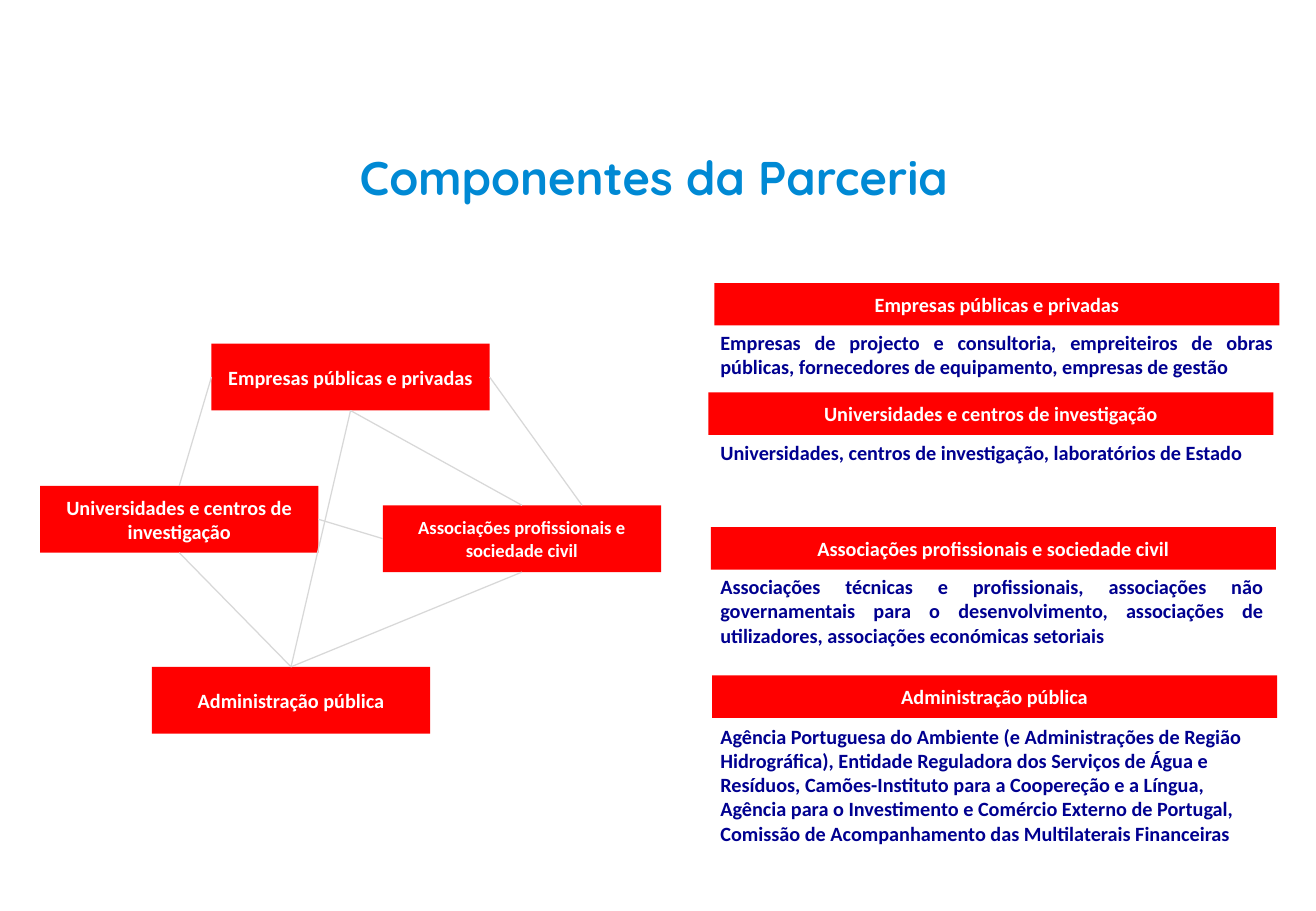
import pptx
import pptx.dml.color
import pptx.enum.shapes
import pptx.enum.text
import pptx.oxml.ns
import pptx.util
import lxml.etree
from dataclasses import dataclass

PX = 9144  # 100 px to the inch
ALIGN = pptx.enum.text.PP_ALIGN
ANCHOR = pptx.enum.text.MSO_ANCHOR
TOP, LEFT, BOTTOM, RIGHT = range(4)  # connection sites of a rectangle


@dataclass(frozen=True)
class Theme:
    box: str = "FF0000"
    box_text: str = "FFFFFF"
    body_text: str = "000090"
    title_text: str = "0089D4"
    link: str = "D8D8D8"
    font: str = "Calibri"
    title_font: str = "Quicksand"
    title_size: int = 28
    size: int = 12
    small: int = 11
    link_width: float = 0.75


class Deck:
    def __init__(self, theme, width, height):
        self.theme = theme
        self.prs = pptx.Presentation()
        self.prs.slide_width = width * PX
        self.prs.slide_height = height * PX
        self.s = self.prs.slides.add_slide(self.prs.slide_layouts[6])

    def color(self, value):
        return pptx.dml.color.RGBColor.from_string(value)

    def fill_text(self, sp, text, size, color, font, align, anchor):
        tf = sp.text_frame
        tf.word_wrap = True
        tf.vertical_anchor = anchor
        p = tf.paragraphs[0]
        p.alignment = align
        r = p.add_run()
        r.text = text
        r.font.name = font
        r.font.size = pptx.util.Pt(size)
        r.font.bold = True
        r.font.color.rgb = self.color(color)

    def text(self, x, y, w, h, text, align):
        t = self.theme
        sp = self.s.shapes.add_textbox(x * PX, y * PX, w * PX, h * PX)
        self.fill_text(sp, text, t.size, t.body_text, t.font, align, ANCHOR.TOP)

    def title(self, x, y, w, h, text):
        t = self.theme
        sp = self.s.shapes.add_textbox(x * PX, y * PX, w * PX, h * PX)
        self.fill_text(sp, text, t.title_size, t.title_text, t.title_font,
                       ALIGN.CENTER, ANCHOR.MIDDLE)

    def box(self, x, y, w, h, text, size=None):
        t = self.theme
        sp = self.s.shapes.add_shape(
            pptx.enum.shapes.MSO_SHAPE.RECTANGLE, x * PX, y * PX, w * PX, h * PX)
        sp.shadow.inherit = False
        sp.fill.solid()
        sp.fill.fore_color.rgb = self.color(t.box)
        sp.line.fill.background()
        self.fill_text(sp, text, size or t.size, t.box_text, t.font,
                       ALIGN.CENTER, ANCHOR.MIDDLE)
        return sp

    def link(self, start, start_site, end, end_site=None):
        """Join two boxes, or a box and a fixed (x, y) point."""
        x, y = (0, 0) if end_site is not None else end
        c = self.s.shapes.add_connector(
            pptx.enum.shapes.MSO_CONNECTOR.STRAIGHT, 0, 0, x * PX, y * PX)
        c.begin_connect(start, start_site)
        if end_site is not None:
            c.end_connect(end, end_site)
        c.line.color.rgb = self.color(self.theme.link)
        c.line.width = pptx.util.Pt(self.theme.link_width)
        lxml.etree.SubElement(c._element.spPr, pptx.oxml.ns.qn("a:effectLst"))


COMPANIES = "Empresas públicas e privadas"
UNIVERSITIES = "Universidades e centros de investigação"
ASSOCIATIONS = "Associações profissionais e sociedade civil"
ADMINISTRATION = "Administração pública"

# Box left and top, heading, text left, top, width and height, alignment, text
SECTIONS = [
    (588, 233, COMPANIES, (583, 267, 475, 50), ALIGN.JUSTIFY,
     "Empresas de projecto e consultoria, empreiteiros de obras públicas, "
     "fornecedores de equipamento, empresas de gestão"),
    (583, 323, UNIVERSITIES, (583, 358, 458, 30), ALIGN.JUSTIFY,
     "Universidades, centros de investigação, laboratórios de Estado"),
    (585, 434, ASSOCIATIONS, (583, 468, 467, 71), ALIGN.JUSTIFY,
     "Associações técnicas e profissionais, associações não governamentais "
     "para o desenvolvimento, associações de utilizadores, associações "
     "económicas setoriais"),
    (586, 556, ADMINISTRATION, (583, 591, 467, 111), ALIGN.LEFT,
     "Agência Portuguesa do Ambiente (e Administrações de Região "
     "Hidrográfica), Entidade Reguladora dos Serviços de Água e Resíduos, "
     "Camões-Instituto para a Coopereção e a Língua, Agência para o "
     "Investimento e Comércio Externo de Portugal, Comissão de "
     "Acompanhamento das Multilaterais Financeiras"),
]


def main():
    theme = Theme()
    deck = Deck(theme, 1083, 750)
    deck.title(217, 108, 642, 75, "Componentes da Parceria")

    # Network of partners
    node = (229, 55)
    companies = deck.box(174, 283, *node, COMPANIES)
    universities = deck.box(33, 400, *node, UNIVERSITIES)
    associations = deck.box(315, 416, *node, ASSOCIATIONS, theme.small)
    administration = deck.box(125, 549, *node, ADMINISTRATION)

    deck.link(companies, LEFT, universities, TOP)
    deck.link(companies, RIGHT, (479, 416))
    deck.link(companies, BOTTOM, associations, TOP)
    deck.link(companies, BOTTOM, administration, TOP)
    deck.link(universities, RIGHT, associations, LEFT)
    deck.link(universities, BOTTOM, administration, TOP)
    deck.link(associations, BOTTOM, administration, TOP)

    # Members of each group
    for x, y, heading, area, align, body in SECTIONS:
        deck.box(x, y, 465, 35, heading)
        deck.text(*area, body, align)

    deck.prs.save("out.pptx")


if __name__ == "__main__":
    main()
